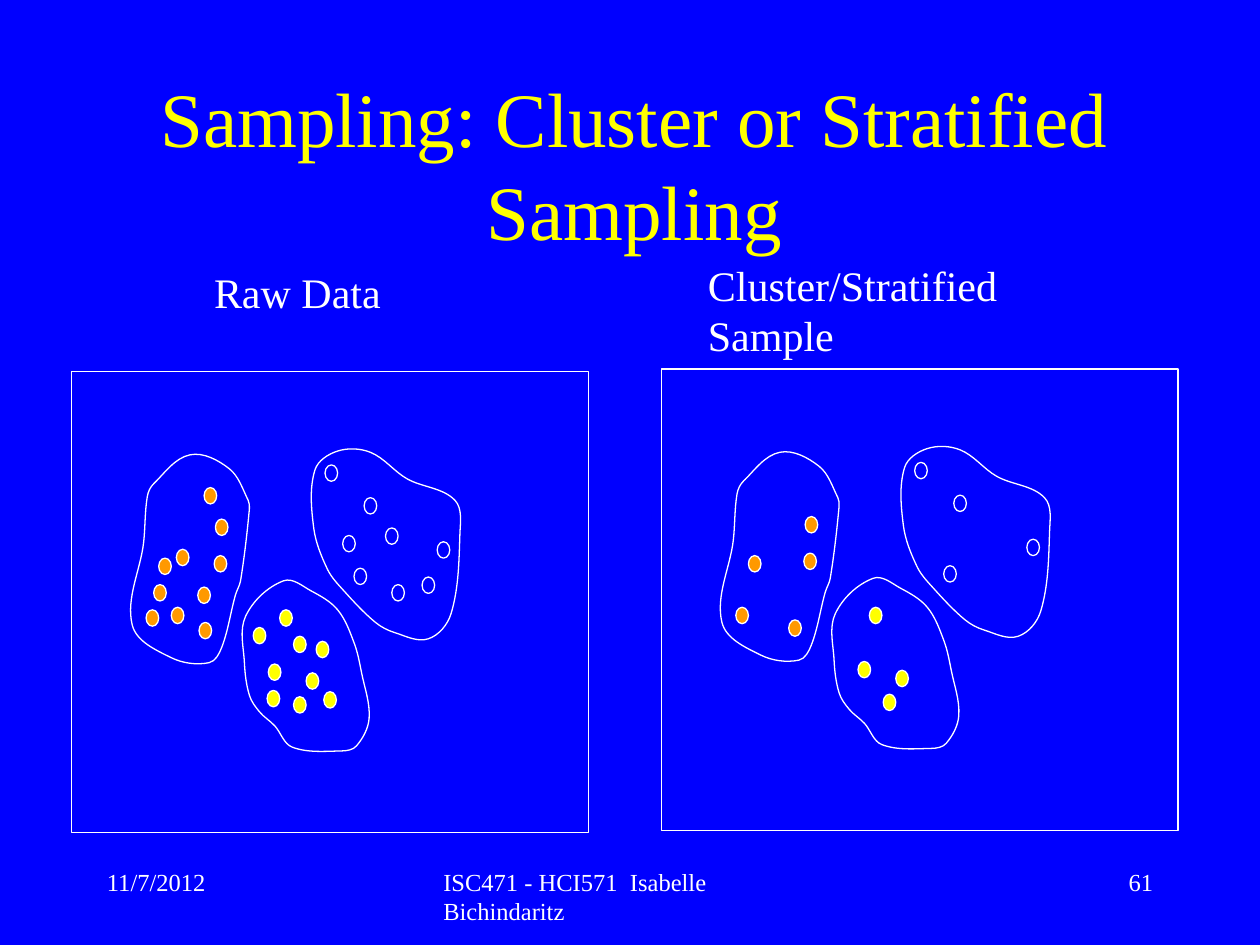
"""Build the slide comparing raw data with a cluster or stratified sample."""
from math import dist

from lxml import etree
from pptx import Presentation
from pptx import util as u
from pptx.dml.color import RGBColor
from pptx.enum import shapes, text
from pptx.oxml.ns import qn

BLUE, WHITE, YELLOW, ORANGE = "0000FF", "FFFFFF", "FFFF00", "FF9900"


def color(value):
    return RGBColor.from_string(value)


def outline(shape, fill=None):
    shape.shadow.inherit = False
    shape.line.color.rgb = color(WHITE)
    shape.line.width = u.Pt(0.75)
    if fill:
        shape.fill.solid()
        shape.fill.fore_color.rgb = color(fill)
    else:
        shape.fill.background()


deck = Presentation()
deck.slide_width, deck.slide_height = u.Inches(10), u.Inches(7.5)
page = deck.slides.add_slide(deck.slide_layouts[6])
page.background.fill.solid()
page.background.fill.fore_color.rgb = color(BLUE)

left, center, right = text.PP_ALIGN.LEFT, text.PP_ALIGN.CENTER, text.PP_ALIGN.RIGHT
top, middle = text.MSO_ANCHOR.TOP, text.MSO_ANCHOR.MIDDLE
labels = [
    ("11/7/2012", (0.75, 6.83, 2.08, 0.5), 14, WHITE, left, top, True),
    ("ISC471 - HCI571  Isabelle Bichindaritz", (3.42, 6.83, 3.17, 0.5), 14, WHITE, left, top, True),
    ("61", (7.17, 6.83, 2.08, 0.5), 14, WHITE, right, top, True),
    ("Sampling: Cluster or Stratified Sampling", (0.82, 0.67, 8.43, 1.25), 44, YELLOW, center, middle, True),
    ("Raw Data", (1.6, 2.07, 1.61, 0.5), 24, WHITE, left, top, False),
    ("Cluster/Stratified Sample", (5.52, 2.01, 3.55, 0.5), 24, WHITE, left, top, True),
]
for words, place, size, ink, align, anchor, wrap in labels:
    box = page.shapes.add_textbox(*map(u.Inches, place))
    box.text_frame.word_wrap = wrap
    box.text_frame.vertical_anchor = anchor
    para = box.text_frame.paragraphs[0]
    para.alignment = align
    span = para.add_run()
    span.text = words
    span.font.color.rgb = color(ink)
    for name, value in {"name": "Times New Roman", "size": u.Pt(size)}.items():
        setattr(span.font, name, value)

clusters = [
    {
        "fill": BLUE,
        "sampled": [(2.89, 3.95), (2.81, 4.51), (3.47, 4.3), (2.58, 3.69)],
        "others": [(3.06, 4.19), (2.72, 4.25), (3.35, 4.58), (3.11, 4.64)],
        "border": [
            (3.61, 3.97), (3.65, 4.24), (3.58, 4.87), (3.4, 5.07), (3.13, 5.02), (2.98, 4.94), (2.73, 4.69),
            (2.6, 4.52), (2.49, 4.19), (2.5, 3.73), (2.68, 3.58), (2.94, 3.59), (3.23, 3.8),
        ],
    },
    {
        "fill": YELLOW,
        "sampled": [(2.33, 5.53), (2.43, 5.34), (2.13, 5.27), (2.22, 4.84)],
        "others": [(2.01, 4.98), (2.51, 5.09), (2.12, 5.48), (2.33, 5.05), (2.57, 5.49)],
        "border": [
            (2.18, 5.76), (2.06, 5.65), (1.98, 5.52), (1.94, 5.26), (1.95, 4.89), (2.25, 4.61), (2.47, 4.69),
            (2.68, 4.84), (2.81, 5.1), (2.87, 5.34), (2.93, 5.7), (2.83, 5.92), (2.71, 5.96), (2.32, 5.93),
        ],
    },
    {
        "fill": ORANGE,
        "sampled": [(1.16, 4.84), (1.26, 4.43), (1.58, 4.94), (1.7, 4.41), (1.71, 4.12)],
        "others": [(1.36, 4.82), (1.22, 4.64), (1.57, 4.66), (1.4, 4.36), (1.62, 3.87)],
        "border": [
            (1.87, 4.72), (1.76, 5.14), (1.66, 5.26), (1.36, 5.22), (1.05, 4.96), (1.14, 4.31), (1.17, 3.94),
            (1.22, 3.84), (1.51, 3.61), (1.82, 3.72), (1.97, 3.97), (1.98, 4.04), (1.91, 4.61),
        ],
    },
]

for shift_x, shift_y, kinds in [(0, 0, ("sampled", "others")), (4.68, -0.02, ("sampled",))]:
    panel = page.shapes.add_group_shape().shapes
    frame = panel.add_shape(
        shapes.MSO_SHAPE.RECTANGLE, u.Inches(0.57 + shift_x), u.Inches(2.95 + shift_y), u.Inches(4.1), u.Inches(3.66)
    )
    outline(frame)
    for cluster in clusters:
        for x, y in (point for kind in kinds for point in cluster[kind]):
            dot = panel.add_shape(
                shapes.MSO_SHAPE.FLOWCHART_CONNECTOR,
                u.Inches(x + shift_x), u.Inches(y + shift_y), u.Inches(0.1), u.Inches(0.13),
            )
            outline(dot, cluster["fill"])
        knots = [(u.Inches(x + shift_x), u.Inches(y + shift_y)) for x, y in cluster["border"]]
        builder = panel.build_freeform(*knots[0])
        for i, start in enumerate(knots):
            before, end, after = (knots[(i + step) % len(knots)] for step in (-1, 1, 2))
            reach = dist(start, end) / 3
            out_pull, in_pull = reach / dist(before, end), reach / dist(start, after)
            leave = [s + (e - b) * out_pull for s, e, b in zip(start, end, before)]
            arrive = [e - (a - s) * in_pull for s, e, a in zip(start, end, after)]
            builder.add_line_segments([leave, arrive, end], close=False)
        border = builder.convert_to_shape()
        outline(border)
        track = next(border.element.iter(qn("a:path")))
        steps = track.findall(qn("a:lnTo"))
        for trio in zip(*[iter(steps)] * 3):
            curve = etree.SubElement(track, qn("a:cubicBezTo"))
            for step in trio:
                curve.append(step[0])
                track.remove(step)
        etree.SubElement(track, qn("a:close"))

deck.save("out.pptx")
